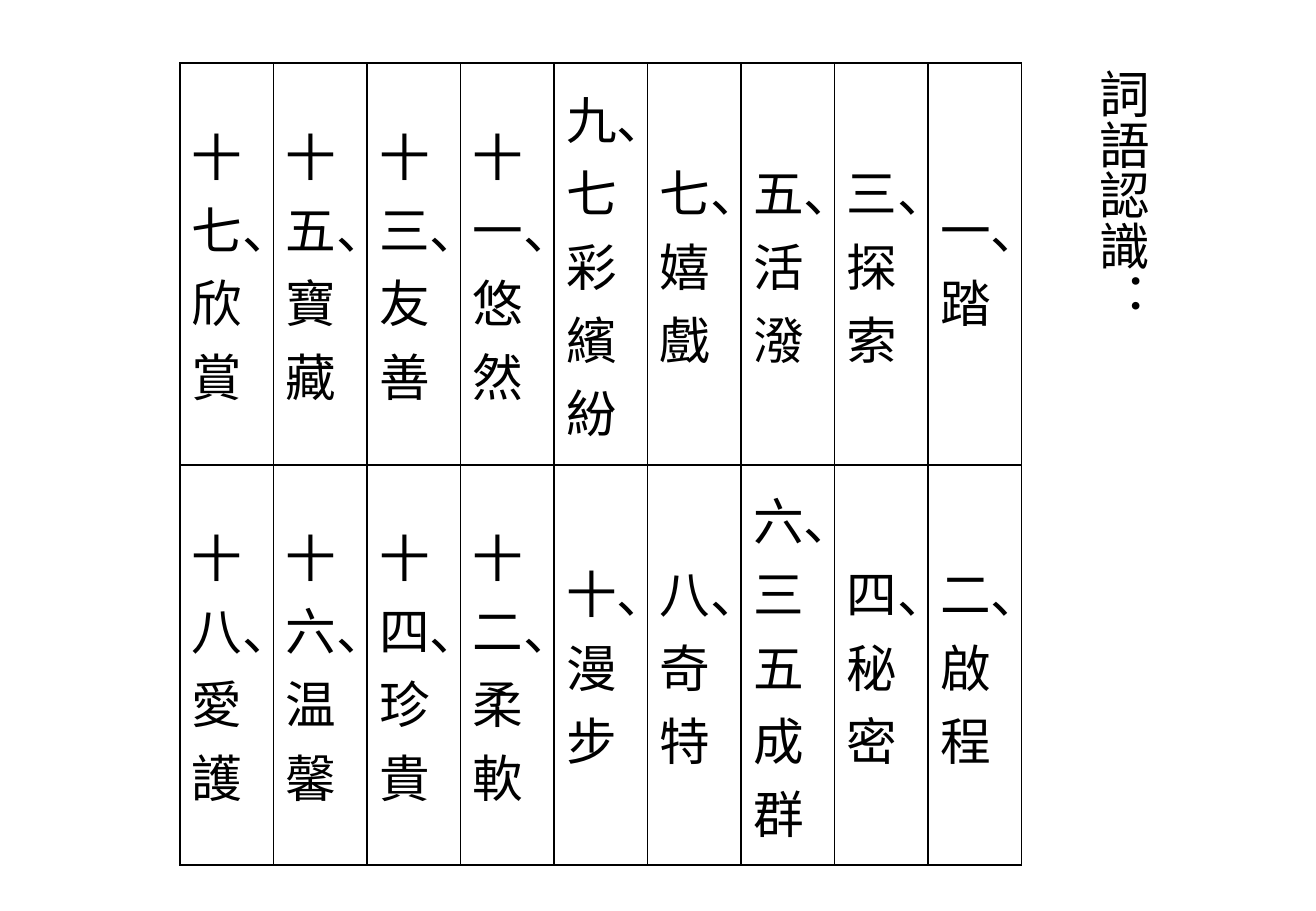
from lxml import etree
from pptx import Presentation
from pptx.dml.color import RGBColor
from pptx.enum.text import MSO_ANCHOR, MSO_AUTO_SIZE, PP_ALIGN
from pptx.oxml.ns import qn
from pptx.util import Inches, Pt

TITLE = "詞語認識："
WORD_ROWS = [
    ["十七、欣賞", "十五、寶藏", "十三、友善", "十一、悠然", "九、七彩繽紛",
     "七、嬉戲", "五、活潑", "三、探索", "一、踏"],
    ["十八、愛護", "十六、温馨", "十四、珍貴", "十二、柔軟", "十、漫步",
     "八、奇特", "六、三五成群", "四、秘密", "二、啟程"],
]
ROW_HEIGHTS = [3.31, 3.29]
COLUMN_WIDTH = 0.77
FONT = "Noto Sans CJK SC"
TEXT_SIZE = 30
BLACK = RGBColor(0, 0, 0)
TITLE_ONLY = 5
TOP = MSO_ANCHOR.TOP
MIDDLE = MSO_ANCHOR.MIDDLE
LEFT = PP_ALIGN.LEFT
NO_AUTOFIT = MSO_AUTO_SIZE.NONE
BORDER_SIDES = ("a:lnL", "a:lnR", "a:lnT", "a:lnB")


def add_text(para, text):
    para.alignment = LEFT
    span = para.add_run()
    span.text = text
    span.font.size = Pt(TEXT_SIZE)
    span.font.name = FONT
    span.font.color.rgb = BLACK
    east_asian = etree.SubElement(span.font._element, qn("a:ea"))
    east_asian.set("typeface", FONT)


def add_borders(properties):
    for side in BORDER_SIDES:
        line = etree.SubElement(properties, qn(side), w=str(Pt(1)))
        fill = etree.SubElement(line, qn("a:solidFill"))
        etree.SubElement(fill, qn("a:srgbClr"), val=str(BLACK))


def add_title(page):
    title = page.shapes.title
    title.left, title.top = Inches(8.88), Inches(0.52)
    title.width, title.height = Inches(0.71), Inches(5.75)
    frame = title.text_frame
    frame.auto_size = NO_AUTOFIT
    frame.vertical_anchor = TOP
    frame._txBody.bodyPr.set("vert", "eaVert")
    para = frame.paragraphs[0]
    para.line_spacing = 1.0
    para.space_before = Pt(0)
    add_text(para, TITLE)


def add_word_table(page):
    column_count = len(WORD_ROWS[0])
    table = page.shapes.add_table(
        len(WORD_ROWS), column_count, Inches(1.48), Inches(0.52),
        Inches(COLUMN_WIDTH * column_count), Inches(sum(ROW_HEIGHTS))).table
    table.first_row = False
    table.horz_banding = False
    for column in table.columns:
        column.width = Inches(COLUMN_WIDTH)
    for row, height, words in zip(table.rows, ROW_HEIGHTS, WORD_ROWS):
        row.height = Inches(height)
        for cell, word in zip(row.cells, words):
            cell.vertical_anchor = MIDDLE
            properties = cell._tc.get_or_add_tcPr()
            properties.set("vert", "eaVert")
            add_borders(properties)
            cell.fill.background()
            add_text(cell.text_frame.paragraphs[0], word)


def main():
    deck = Presentation()
    deck.slide_width, deck.slide_height = Inches(10.83), Inches(7.5)
    page = deck.slides.add_slide(deck.slide_layouts[TITLE_ONLY])
    add_title(page)
    add_word_table(page)
    deck.save("out.pptx")


if __name__ == "__main__":
    main()
